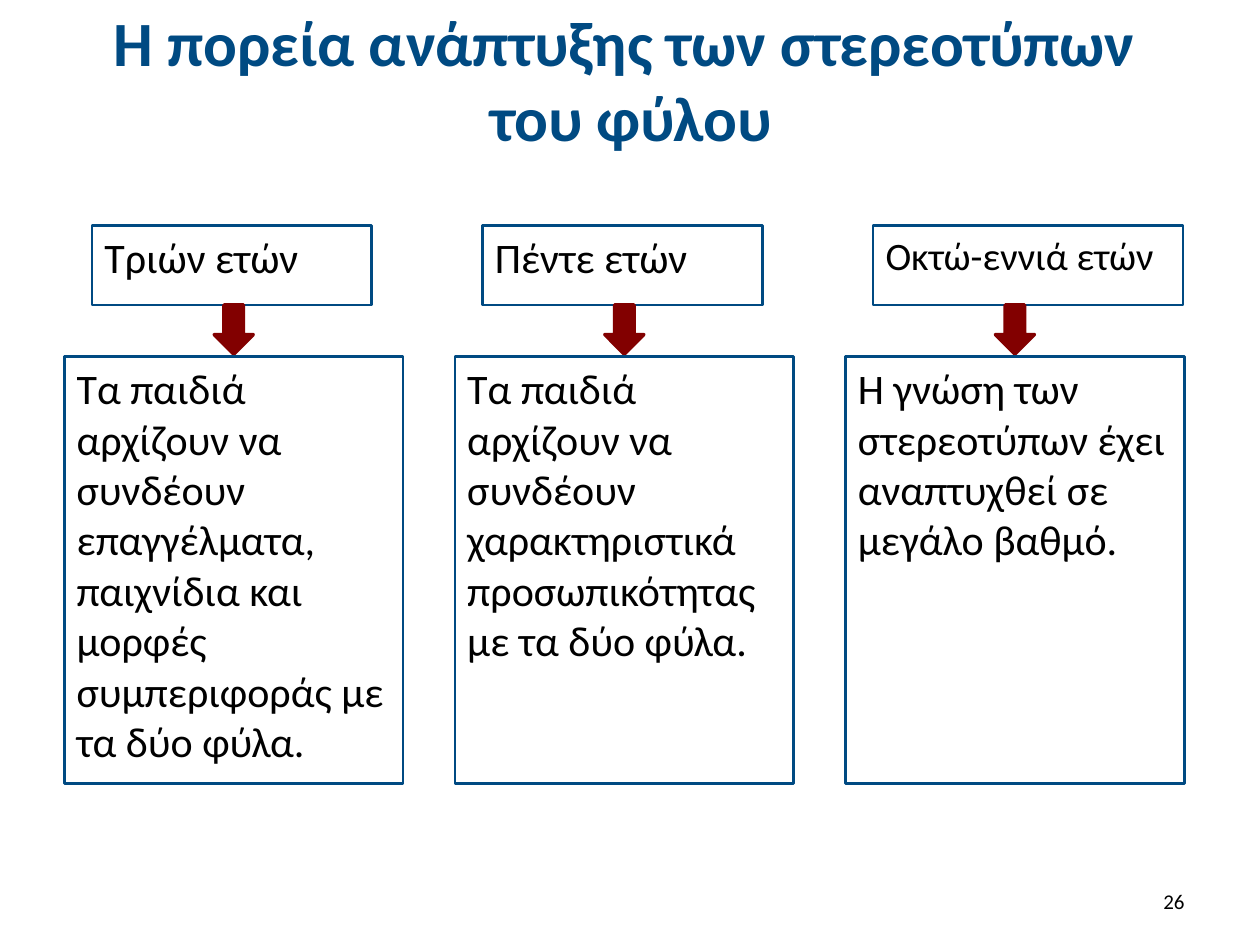
from pptx import Presentation
from pptx.dml.color import RGBColor
from pptx.enum.shapes import MSO_SHAPE
from pptx.enum.text import MSO_ANCHOR, PP_ALIGN
from pptx.util import Inches, Pt

NAVY = RGBColor(0x00, 0x4A, 0x82)
MAROON = RGBColor(0x82, 0x00, 0x00)
BLACK = RGBColor(0x00, 0x00, 0x00)

FONT = "Calibri"
COLUMN_LEFT, COLUMN_STEP, COLUMN_WIDTH = 0.51, 3.1, 2.69
HEADING_INSET, HEADING_TOP, HEADING_HEIGHT = 0.22, 1.79, 0.63
ARROW_WIDTH, ARROW_HEIGHT = 0.31, 0.39
BODY_TOP, BODY_HEIGHT = 2.83, 3.39

STAGES = [
    ("Τριών ετών", 24, 2.22,
     "Τα παιδιά αρχίζουν να συνδέουν επαγγέλματα, παιχνίδια και μορφές "
     "συμπεριφοράς με τα δύο φύλα."),
    ("Πέντε ετών", 24, 2.22,
     "Τα παιδιά αρχίζουν να συνδέουν χαρακτηριστικά προσωπικότητας "
     "με τα δύο φύλα."),
    ("Οκτώ-εννιά ετών", 22.2, 2.46,
     "Η γνώση των στερεοτύπων έχει αναπτυχθεί σε μεγάλο βαθμό."),
]


def write_text(shape, text, size, color=BLACK, bold=False,
               align=PP_ALIGN.LEFT, anchor=MSO_ANCHOR.TOP, space_before=0):
    frame = shape.text_frame
    frame.word_wrap = True
    frame.vertical_anchor = anchor
    para = frame.paragraphs[0]
    para.text = text
    para.alignment = align
    para.space_before = Pt(space_before)
    for span in para.runs:
        span.font.name = FONT
        span.font.size = Pt(size)
        span.font.bold = bold
        span.font.color.rgb = color


def add_label(page, bounds, text, size, **style):
    box = page.shapes.add_textbox(*map(Inches, bounds))
    write_text(box, text, size, anchor=MSO_ANCHOR.MIDDLE, **style)


def add_preset(page, preset, bounds, line_color, line_width):
    shape = page.shapes.add_shape(preset, *map(Inches, bounds))
    shape.shadow.inherit = False
    shape.line.color.rgb = line_color
    shape.line.width = Pt(line_width)
    return shape


def add_frame(page, bounds, text, size):
    box = add_preset(page, MSO_SHAPE.RECTANGLE, bounds, NAVY, 1.5)
    box.fill.background()
    write_text(box, text, size, space_before=12)


def add_down_arrow(page, bounds):
    arrow = add_preset(page, MSO_SHAPE.DOWN_ARROW, bounds, MAROON, 2)
    arrow.fill.solid()
    arrow.fill.fore_color.rgb = MAROON


def add_stage(page, column, heading, heading_size, heading_width, body):
    left = COLUMN_LEFT + column * COLUMN_STEP
    arrow_left = left + (COLUMN_WIDTH - ARROW_WIDTH) / 2
    add_frame(page, (left + HEADING_INSET, HEADING_TOP, heading_width, HEADING_HEIGHT),
              heading, heading_size)
    add_down_arrow(page, (arrow_left, HEADING_TOP + HEADING_HEIGHT,
                          ARROW_WIDTH, ARROW_HEIGHT))
    add_frame(page, (left, BODY_TOP, COLUMN_WIDTH, BODY_HEIGHT), body, 24)


def main():
    deck = Presentation()
    deck.slide_width, deck.slide_height = Inches(10), Inches(7.5)
    page = deck.slides.add_slide(deck.slide_layouts[6])
    add_label(page, (0.51, 0.13, 9, 0.99),
              "Η πορεία ανάπτυξης των στερεοτύπων \vτου φύλου", 36,
              color=NAVY, bold=True, align=PP_ALIGN.CENTER)
    for column, stage in enumerate(STAGES):
        add_stage(page, column, *stage)
    add_label(page, (7.17, 6.95, 2.33, 0.4), "26", 12, align=PP_ALIGN.RIGHT)
    deck.save("out.pptx")


if __name__ == "__main__":
    main()
